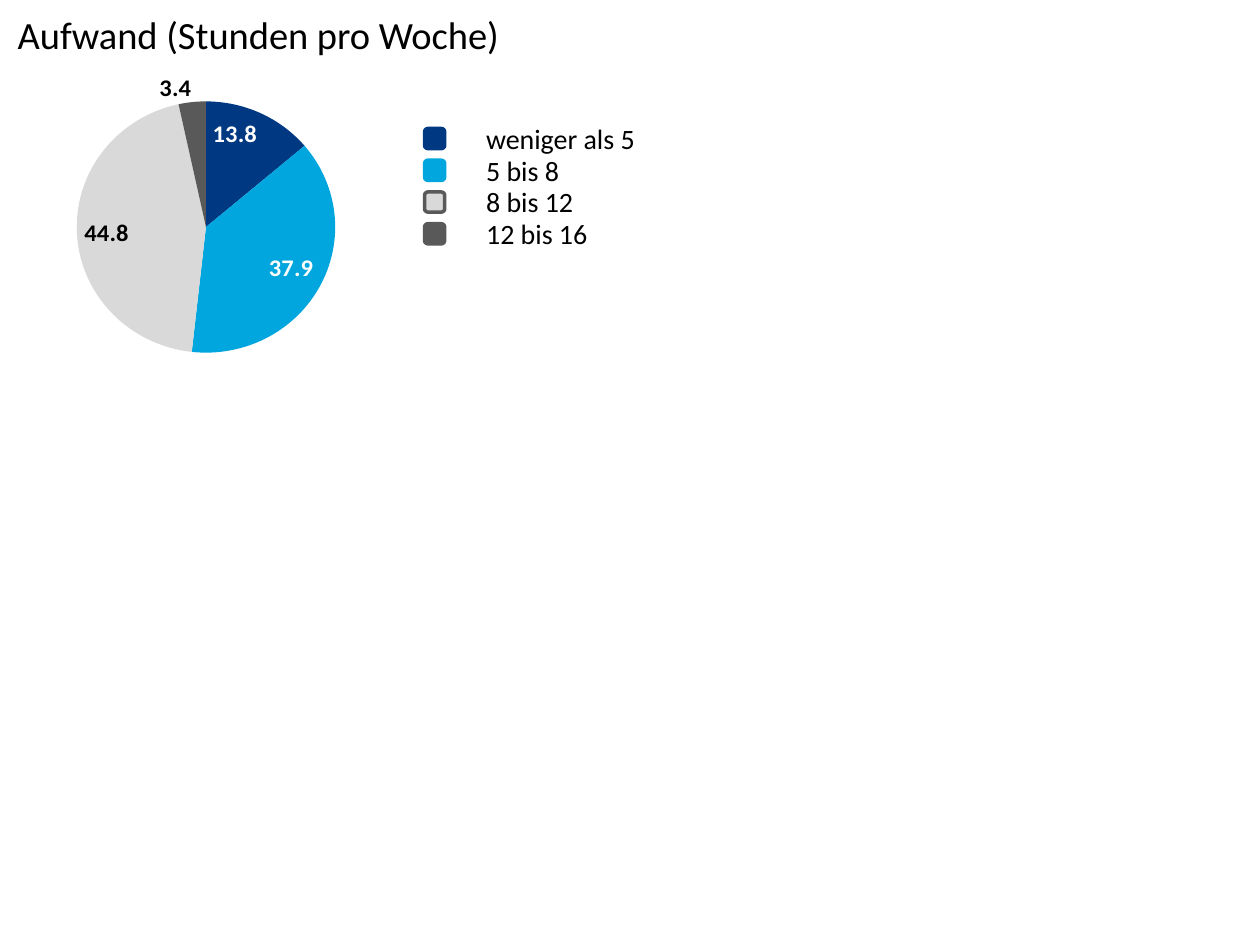
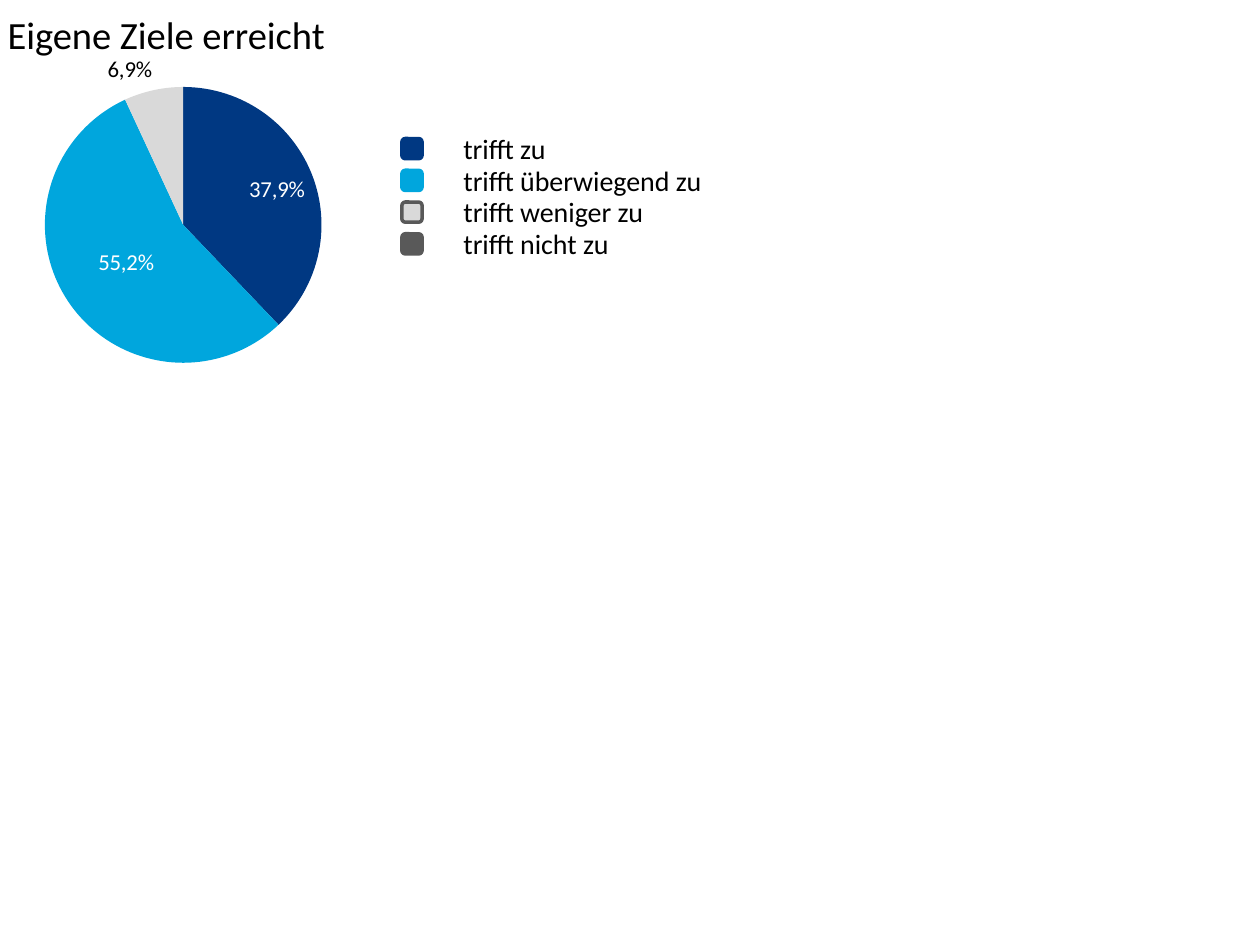
from dataclasses import dataclass
from typing import Optional

from lxml.etree import SubElement
from pptx import Presentation
from pptx.chart.chart import Chart
from pptx.chart.data import CategoryChartData
from pptx.chart.point import Point
from pptx.dml.color import RGBColor
from pptx.enum.chart import XL_CHART_TYPE, XL_LABEL_POSITION
from pptx.enum.shapes import MSO_SHAPE
from pptx.enum.text import MSO_ANCHOR, MSO_AUTO_SIZE, PP_ALIGN
from pptx.oxml.ns import qn
from pptx.slide import Slide
from pptx.text.text import Font, TextFrame
from pptx.util import Inches, Pt

# Shared style
NAVY = RGBColor(0x00, 0x38, 0x82)
CYAN = RGBColor(0x00, 0xA6, 0xDD)
LIGHT_GREY = RGBColor(0xD9, 0xD9, 0xD9)
DARK_GREY = RGBColor(0x59, 0x59, 0x59)
BLACK = RGBColor(0x00, 0x00, 0x00)
WHITE = RGBColor(0xFF, 0xFF, 0xFF)
FONT = "Calibri"
TITLE_SIZE, LEGEND_SIZE = 22, 16

# Grid: 100 columns by 75 rows
SLIDE_WIDTH, SLIDE_HEIGHT = Inches(10), Inches(7.5)
COLUMN, ROW = SLIDE_WIDTH / 100, SLIDE_HEIGHT / 75
TITLE_TOP, TITLE_ROWS = 0.4, 4.7
KEY_SIZE, KEY_PITCH = 1.6, 2.52
LABEL_INDENT, LABEL_RISE, LABEL_ROWS = 3.9, 1.05, 3.7
PLOT_TOP, PLOT_HEIGHT = 0.1, 0.9  # shares of the chart's height

INSIDE = XL_LABEL_POSITION.INSIDE_END
CENTER = XL_LABEL_POSITION.CENTER
OUTSIDE = XL_LABEL_POSITION.OUTSIDE_END  # for slices narrower than their label


@dataclass(frozen=True)
class Area:
    left: float
    top: float
    columns: float
    rows: float

    def emu(self) -> tuple[int, int, int, int]:
        return (round(self.left * COLUMN), round(self.top * ROW),
                round(self.columns * COLUMN), round(self.rows * ROW))


@dataclass(frozen=True)
class SliceStyle:
    fill: RGBColor
    outline: RGBColor
    label: RGBColor


@dataclass(frozen=True)
class Answer:
    name: str
    share: float
    label_columns: float
    share_text: Optional[str] = None
    position: XL_LABEL_POSITION = INSIDE


@dataclass(frozen=True)
class Question:
    title: str
    title_left: float
    title_columns: float
    pie: Area
    plot_width: float
    share_size: int
    share_bold: bool
    legend_left: float
    legend_top: float
    answers: tuple[Answer, ...]


SLICE_STYLES = (
    SliceStyle(NAVY, NAVY, WHITE),
    SliceStyle(CYAN, CYAN, WHITE),
    SliceStyle(LIGHT_GREY, DARK_GREY, BLACK),
    SliceStyle(DARK_GREY, DARK_GREY, BLACK),
)

QUESTIONS = (
    Question(
        "Aufwand (Stunden pro Woche)", 0.4, 43.3,
        Area(1.2, 5.2, 30.3, 22.8), 1.0, 14, True, 33.7, 10.2,
        (Answer("weniger als 5", 13.8, 14.0),
         Answer("5 bis 8", 37.9, 7.9),
         Answer("8 bis 12", 44.8, 9.0),
         Answer("12 bis 16", 3.4, 10.2, position=OUTSIDE)),
    ),
    Question(
        "Eigene Ziele erreicht", -0.4, 38.6,
        Area(0, 4.4, 30.3, 24.4), 0.96, 13, False, 31.9, 11.0,
        (Answer("trifft zu", 37.9, 8.7, "37,9%"),
         Answer("trifft überwiegend zu", 55.2, 21.8, "55,2%", CENTER),
         Answer("trifft weniger zu", 6.9, 17.1, "6,9%", OUTSIDE),
         Answer("trifft nicht zu", 0, 13.8)),
    ),
)


def style_font(font: Font, size: int, color: RGBColor = BLACK,
               bold: bool = False) -> None:
    font.name = FONT
    font.size = Pt(size)
    font.bold = bold
    font.color.rgb = color


def write_line(frame: TextFrame, text: str, size: int, wrap: bool) -> None:
    frame.word_wrap = wrap
    frame.auto_size = MSO_AUTO_SIZE.SHAPE_TO_FIT_TEXT
    frame.vertical_anchor = MSO_ANCHOR.TOP
    paragraph = frame.paragraphs[0]
    paragraph.alignment = PP_ALIGN.LEFT
    run = paragraph.add_run()
    run.text = text
    style_font(run.font, size)


def draw_title(slide: Slide, question: Question) -> None:
    title = slide.shapes.title
    title.left, title.top, title.width, title.height = Area(
        question.title_left, TITLE_TOP, question.title_columns, TITLE_ROWS).emu()
    write_line(title.text_frame, question.title, TITLE_SIZE, wrap=True)


def place_plot(chart: Chart, width: float) -> None:
    """Fix the pie's area as shares of the chart."""
    plot_area = chart._chartSpace.chart.plotArea
    layout = plot_area.find(qn("c:layout"))
    if layout is None:
        layout = SubElement(plot_area, qn("c:layout"))
        plot_area.insert(0, layout)
    manual = SubElement(layout, qn("c:manualLayout"))
    settings = {"layoutTarget": "inner", "xMode": "edge", "yMode": "edge",
                "x": 0, "y": PLOT_TOP, "w": width, "h": PLOT_HEIGHT}
    for tag, value in settings.items():
        SubElement(manual, qn(f"c:{tag}")).set("val", str(value))


def style_slice(point: Point, answer: Answer, style: SliceStyle,
                question: Question) -> None:
    point.format.fill.solid()
    point.format.fill.fore_color.rgb = style.fill
    point.format.line.fill.background()
    if not answer.share:
        return
    label = point.data_label
    if answer.share_text:
        run = label.text_frame.paragraphs[0].add_run()
        run.text = answer.share_text
        font = run.font
    else:
        font = label.font
    style_font(font, question.share_size, style.label, question.share_bold)
    label.position = answer.position


def draw_pie(slide: Slide, question: Question) -> None:
    data = CategoryChartData(number_format="0.0")
    data.categories = [str(i + 1) for i in range(len(question.answers))]
    data.add_series("Series 1", [answer.share for answer in question.answers])
    chart = slide.shapes.add_chart(
        XL_CHART_TYPE.PIE, *question.pie.emu(), data).chart
    chart.has_legend = False
    chart.has_title = False
    style_font(chart.font, 10)
    place_plot(chart, question.plot_width)

    plot = chart.plots[0]
    plot.vary_by_categories = True
    series = plot.series[0]
    labels = series.data_labels
    labels.show_value = True
    labels.number_format = "0.0;;"  # hides empty slices
    labels.number_format_is_linked = False
    labels.position = INSIDE
    style_font(labels.font, question.share_size, bold=question.share_bold)
    for i, (answer, style) in enumerate(zip(question.answers, SLICE_STYLES)):
        style_slice(series.points[i], answer, style, question)


def draw_legend(slide: Slide, question: Question) -> None:
    legend = slide.shapes.add_group_shape().shapes
    for i, (answer, style) in enumerate(zip(question.answers, SLICE_STYLES)):
        top = question.legend_top + i * KEY_PITCH
        key = legend.add_shape(
            MSO_SHAPE.ROUNDED_RECTANGLE,
            *Area(question.legend_left, top, KEY_SIZE, KEY_SIZE).emu())
        key.shadow.inherit = False
        key.fill.solid()
        key.fill.fore_color.rgb = style.fill
        key.line.color.rgb = style.outline
        key.line.width = Pt(2)
        label = legend.add_textbox(
            *Area(question.legend_left + LABEL_INDENT, top - LABEL_RISE,
                  answer.label_columns, LABEL_ROWS).emu())
        write_line(label.text_frame, answer.name, LEGEND_SIZE, wrap=False)


def main() -> None:
    deck = Presentation()
    deck.slide_width, deck.slide_height = SLIDE_WIDTH, SLIDE_HEIGHT
    title_only = deck.slide_layouts[5]
    for question in QUESTIONS:
        slide = deck.slides.add_slide(title_only)
        draw_title(slide, question)
        draw_pie(slide, question)
        draw_legend(slide, question)
    deck.save("out.pptx")


if __name__ == "__main__":
    main()
